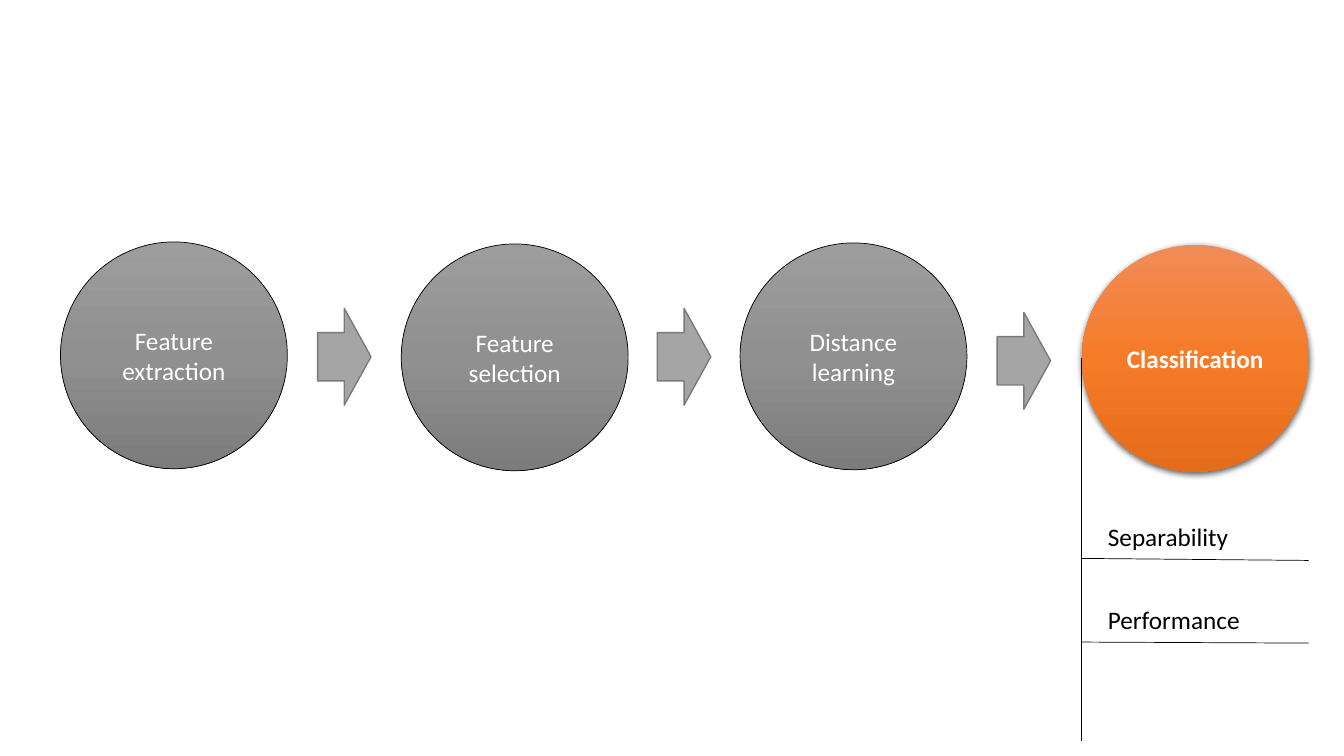
from copy import deepcopy

from lxml import etree
from pptx import Presentation
from pptx import util as u
from pptx.dml import color
from pptx.enum import shapes, text
from pptx.oxml import ns

PX = 9144
FONT = "Calibri"
DIAMETER = 225
GRAY = ["9D9D9D", "909090", "7C7C7C"]
ORANGE = ["F18C57", "F67B28", "E56C19"]
STEPS = [
    ("Feature extraction", 60, 240),
    ("Feature selection", 398, 242),
    ("Distance learning", 734, 241),
]
ARROW_TOPS = [306, 306, 310]
CRITERIA = [("Separability", 141, 512, 554, 556), ("Performance", 152, 595, 637, 638)]
STEM_X = 1073


def px(*lengths):
    """Turn pixel lengths into EMU."""
    return [u.Emu(length * PX) for length in lengths]


def rgb(value):
    """Turn a hex string into a colour."""
    return color.RGBColor.from_string(value)


def write(box, words, ink, bold=False):
    """Put one paragraph of text into a shape."""
    para = box.text_frame.paragraphs[0]
    para.text = words
    para.font.name = FONT
    para.font.size = u.Pt(18)
    para.font.bold = bold
    para.font.color.rgb = rgb(ink)
    return para


def outline(line, ink, points):
    """Set the colour and width of a line."""
    line.color.rgb = rgb(ink)
    line.width = u.Pt(points)


def fill_gradient(shape, colours):
    """Fill a shape from top to bottom with evenly spaced colours."""
    shape.fill.gradient()
    shape.fill.gradient_angle = 270
    stop_list = shape._element.spPr.find(".//" + ns.qn("a:gsLst"))
    stop_list.append(deepcopy(stop_list[-1]))
    for index, (stop, value) in enumerate(zip(shape.fill.gradient_stops, colours)):
        stop.position = index / (len(colours) - 1)
        stop.color.rgb = rgb(value)


def add_circle(page, words, left, top, colours, bold=False):
    """Draw one step of the process as a circle."""
    circle = page.shapes.add_shape(
        shapes.MSO_SHAPE.OVAL, *px(left, top, DIAMETER, DIAMETER))
    circle.shadow.inherit = False
    fill_gradient(circle, colours)
    circle.text_frame.word_wrap = True
    circle.text_frame.vertical_anchor = text.MSO_ANCHOR.MIDDLE
    write(circle, words, "FFFFFF", bold).alignment = text.PP_ALIGN.CENTER
    return circle


def add_shadow(shape):
    """Give a shape a soft shadow below it."""
    effects = shape._element.spPr.find(ns.qn("a:effectLst"))
    shadow = etree.SubElement(
        effects, ns.qn("a:outerShdw"), blurRad=str(u.Pt(4.5)), dist=str(u.Pt(1.5)),
        dir="5400000", algn="ctr", rotWithShape="0")
    ink = etree.SubElement(shadow, ns.qn("a:srgbClr"), val="000000")
    etree.SubElement(ink, ns.qn("a:alpha"), val="63000")


def add_arrow(page, left, top):
    """Draw a block arrow between two steps."""
    arrow = page.shapes.add_shape(
        shapes.MSO_SHAPE.RIGHT_ARROW, *px(left, top, 53, 96))
    arrow.shadow.inherit = False
    arrow.fill.solid()
    arrow.fill.fore_color.rgb = rgb("A5A5A5")
    outline(arrow.line, "7A7A7A", 1)


def add_line(page, *ends):
    """Draw a thin black line."""
    line = page.shapes.add_connector(shapes.MSO_CONNECTOR.STRAIGHT, *px(*ends))
    outline(line.line, "000000", 0.5)
    etree.SubElement(line._element.spPr, ns.qn("a:effectLst"))


def add_label(page, words, left, top, width):
    """Write a label that does not wrap."""
    box = page.shapes.add_textbox(*px(left, top, width, 40))
    box.text_frame.word_wrap = False
    box.text_frame.auto_size = text.MSO_AUTO_SIZE.SHAPE_TO_FIT_TEXT
    write(box, words, "000000")


def main():
    """Build the process slide and save it."""
    deck = Presentation()
    deck.slide_width, deck.slide_height = px(1333, 750)
    page = deck.slides.add_slide(deck.slide_layouts[6])
    for words, left, top in STEPS:
        circle = add_circle(page, words, left, top, GRAY)
        outline(circle.line, "000000", 0.5)
    current = add_circle(page, "Classification", STEM_X, 243, ORANGE, bold=True)
    current.line.fill.background()
    add_shadow(current)
    for index, top in enumerate(ARROW_TOPS):
        add_arrow(page, 315 + 337 * index, top)
    add_line(page, STEM_X, 355, STEM_X, 735)
    for words, width, top, start, end in CRITERIA:
        add_line(page, STEM_X, start, STEM_X + DIAMETER, end)
        add_label(page, words, STEM_X + 16, top, width)
    deck.save("out.pptx")


if __name__ == "__main__":
    main()
